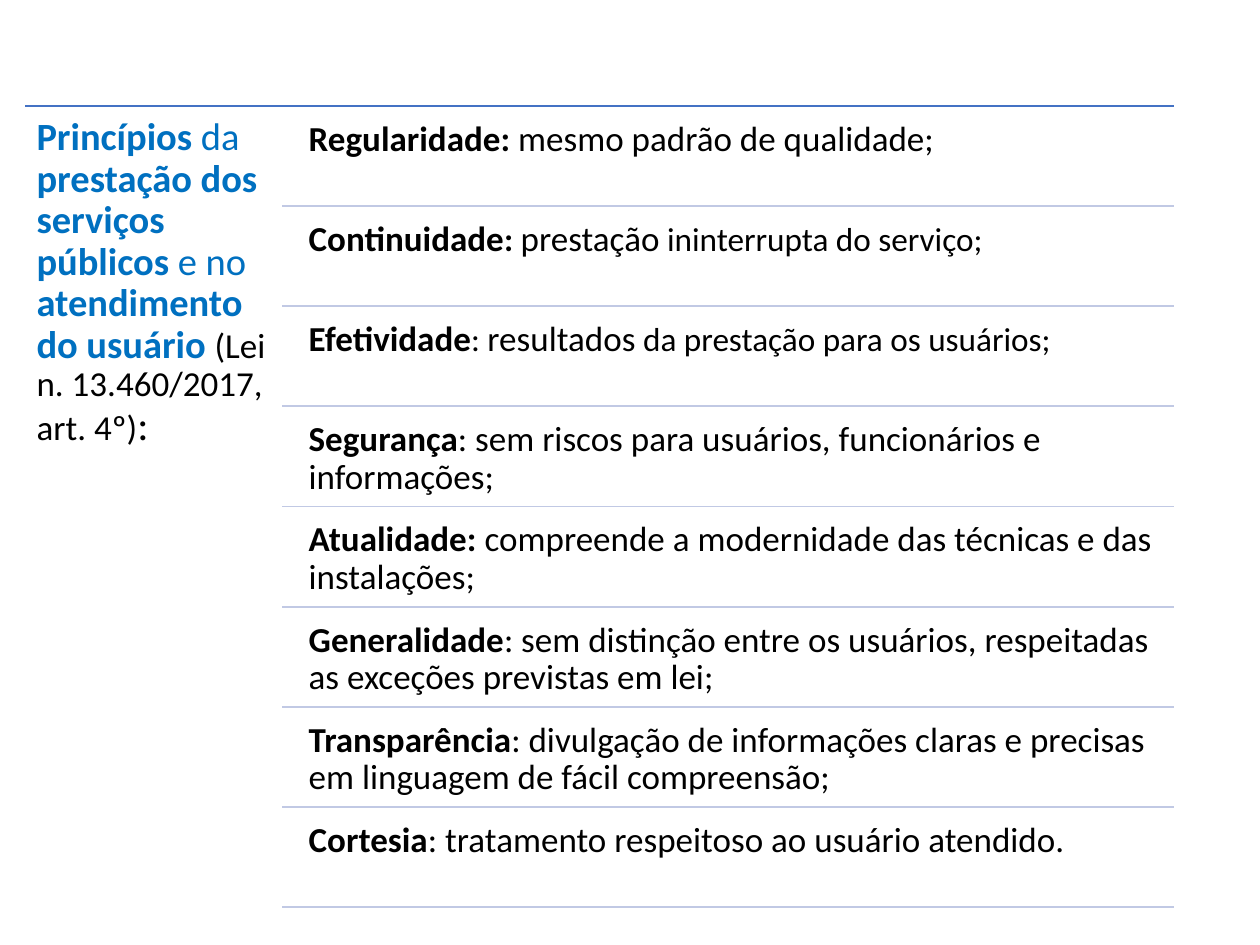
from typing import NamedTuple

from lxml import etree
from pptx import Presentation
from pptx import util as u
from pptx.dml.color import RGBColor
from pptx.enum import shapes, text
from pptx.oxml.ns import qn

COLORS = {"accent": "4472C4", "rule": "C1C9E4", "heading": "0070C0", "body": "000000"}
FONT = "Calibri"

# Grid in inches: one heading column, one column of equal rows
WIDTH, HEIGHT = 10, 7.5
LEFT, RIGHT = 0.2, 9.32
TOP, BOTTOM = 0.84, 7.2
RULE_LEFT, TEXT_LEFT = 2.24, 2.37
ROW_GAP = 0.04


class Run(NamedTuple):
    text: str
    bold: bool = False
    size: int = 20
    color: str = "body"


HEADING = [
    Run("Princípios", True, 22, "heading"),
    Run(" da ", False, 22, "heading"),
    Run("prestação dos serviços públicos", True, 22, "heading"),
    Run(" e no ", False, 22, "heading"),
    Run("atendimento do usuário ", True, 22, "heading"),
    Run("(Lei n. 13.460/2017, art. 4º)"),
    Run(":", size=24),
]

PRINCIPLES = [
    [Run("Regularidade: ", True), Run("mesmo padrão de qualidade;")],
    [Run("Continuidade", True), Run(": ", True, 19), Run("prestação"),
     Run(" ininterrupta do serviço;", size=19)],
    [Run("Efetividade", True), Run(": ", size=19), Run("resultados"),
     Run(" da prestação para os usuários;", size=19)],
    [Run("Segurança", True),
     Run(": sem riscos para usuários, funcionários e informações;")],
    [Run("Atualidade: ", True),
     Run("compreende a modernidade das técnicas e das instalações;")],
    [Run("Generalidade", True),
     Run(": sem distinção entre os usuários, respeitadas as exceções previstas em lei;")],
    [Run("Transparência", True),
     Run(": divulgação de informações claras e precisas em linguagem de fácil compreensão;")],
    [Run("Cortesia", True), Run(": tratamento respeitoso ao usuário atendido.")],
]
ROW = (BOTTOM - TOP) / len(PRINCIPLES)


def add_rule(s, left: float, y: float, color: str) -> None:
    """Draw a horizontal rule from left to the right margin."""
    line = s.shapes.add_connector(
        shapes.MSO_CONNECTOR.STRAIGHT,
        u.Inches(left), u.Inches(y), u.Inches(RIGHT), u.Inches(y))
    line.line.color.rgb = RGBColor.from_string(COLORS[color])
    line.line.width = u.Pt(1)
    etree.SubElement(line._element.spPr, qn("a:effectLst"))


def write(sp, runs: list[Run], inset: float) -> None:
    """Fill a shape with one left-aligned paragraph."""
    tf = sp.text_frame
    tf.word_wrap = True
    tf.auto_size = text.MSO_AUTO_SIZE.NONE
    tf.vertical_anchor = text.MSO_ANCHOR.TOP
    tf.margin_left = tf.margin_right = u.Inches(inset)
    tf.margin_top = tf.margin_bottom = u.Inches(inset)
    p = tf.paragraphs[0]
    p.alignment = text.PP_ALIGN.LEFT
    p.line_spacing = 0.9
    for run in runs:
        r = p.add_run()
        r.text = run.text
        r.font.name = FONT
        r.font.size = u.Pt(run.size)
        r.font.bold = run.bold
        r.font.color.rgb = RGBColor.from_string(COLORS[run.color])


def main() -> None:
    prs = Presentation()
    prs.slide_width, prs.slide_height = u.Inches(WIDTH), u.Inches(HEIGHT)
    s = prs.slides.add_slide(prs.slide_layouts[5])

    # Heading column
    add_rule(s, LEFT, TOP, "accent")
    title = s.shapes.title
    title.left, title.top = u.Inches(LEFT), u.Inches(TOP)
    title.width, title.height = u.Inches(RULE_LEFT - LEFT), u.Inches(BOTTOM - TOP + ROW_GAP)
    write(title, HEADING, 0.09)

    # Principles, each closed by a rule
    for i, runs in enumerate(PRINCIPLES):
        y = TOP + i * ROW
        sp = s.shapes.add_textbox(
            u.Inches(TEXT_LEFT), u.Inches(y + ROW_GAP),
            u.Inches(RIGHT - TEXT_LEFT), u.Inches(ROW - ROW_GAP))
        write(sp, runs, 0.08)
        add_rule(s, RULE_LEFT, y + ROW, "rule")

    prs.save("out.pptx")


if __name__ == "__main__":
    main()
